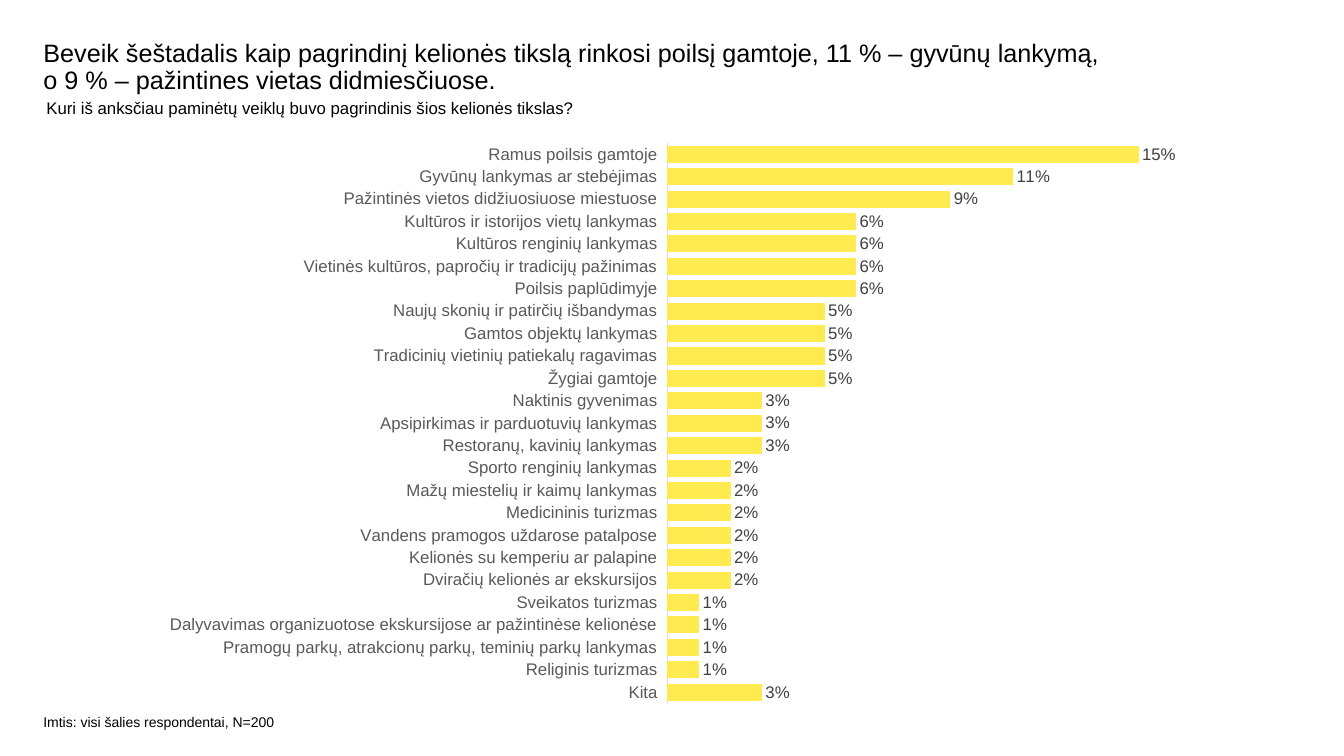
from lxml import etree
from pptx import Presentation
from pptx.chart.data import CategoryChartData
from pptx.dml.color import RGBColor
from pptx.enum.chart import XL_CHART_TYPE, XL_LABEL_POSITION, XL_TICK_LABEL_POSITION, XL_TICK_MARK
from pptx.enum.text import MSO_ANCHOR, MSO_AUTO_SIZE, PP_ALIGN
from pptx.oxml import parse_xml
from pptx.oxml.ns import nsdecls, qn
from pptx.util import Pt

BAR_CLUSTERED = XL_CHART_TYPE.BAR_CLUSTERED
OUTSIDE_END = XL_LABEL_POSITION.OUTSIDE_END
NO_TICK = XL_TICK_MARK.NONE
LABELS_LOW = XL_TICK_LABEL_POSITION.LOW
TOP = MSO_ANCHOR.TOP
NO_AUTOSIZE = MSO_AUTO_SIZE.NONE
LEFT = PP_ALIGN.LEFT

EMU_PER_PX = 9144
FONT = "Arial"
BLACK, YELLOW, LABEL_GREY, AXIS_GREY, LINE_GREY = "000000", "FFEB50", "404040", "595959", "D9D9D9"

ACTIVITIES = [
    ("Ramus poilsis gamtoje", 15),
    ("Gyvūnų lankymas ar stebėjimas", 11),
    ("Pažintinės vietos didžiuosiuose miestuose", 9),
    ("Kultūros ir istorijos vietų lankymas", 6),
    ("Kultūros renginių lankymas", 6),
    ("Vietinės kultūros, papročių ir tradicijų pažinimas", 6),
    ("Poilsis paplūdimyje", 6),
    ("Naujų skonių ir patirčių išbandymas", 5),
    ("Gamtos objektų lankymas", 5),
    ("Tradicinių vietinių patiekalų ragavimas", 5),
    ("Žygiai gamtoje", 5),
    ("Naktinis gyvenimas", 3),
    ("Apsipirkimas ir parduotuvių lankymas", 3),
    ("Restoranų, kavinių lankymas", 3),
    ("Sporto renginių lankymas", 2),
    ("Mažų miestelių ir kaimų lankymas", 2),
    ("Medicininis turizmas", 2),
    ("Vandens pramogos uždarose patalpose", 2),
    ("Kelionės su kemperiu ar palapine", 2),
    ("Dviračių kelionės ar ekskursijos", 2),
    ("Sveikatos turizmas", 1),
    ("Dalyvavimas organizuotose ekskursijose ar pažintinėse kelionėse", 1),
    ("Pramogų parkų, atrakcionų parkų, teminių parkų lankymas", 1),
    ("Religinis turizmas", 1),
    ("Kita", 3),
]


def px(length):
    """Turn whole pixels into EMU."""
    return length * EMU_PER_PX


def color(hex_string):
    """Turn a hex string into a colour."""
    return RGBColor.from_string(hex_string)


def format_font(font, size, hex_string):
    """Set the face, size and colour of a font."""
    font.name = FONT
    font.size = Pt(size)
    font.color.rgb = color(hex_string)


def fill_text(placeholder, box, text, size, margin=0, indent=0):
    """Place a placeholder in its box and write one formatted paragraph."""
    placeholder.left, placeholder.top, placeholder.width, placeholder.height = map(px, box)
    frame = placeholder.text_frame
    frame.margin_left = frame.margin_right = frame.margin_top = frame.margin_bottom = 0
    frame.word_wrap = True
    frame.auto_size = NO_AUTOSIZE
    frame.vertical_anchor = TOP
    paragraph = frame.paragraphs[0]
    paragraph.alignment = LEFT
    paragraph.line_spacing = 0.9
    paragraph.space_before = Pt(0)
    properties = paragraph._p.get_or_add_pPr()
    properties.set("marL", str(px(margin)))
    properties.set("indent", str(px(indent)))
    etree.SubElement(properties, qn("a:buNone"))
    run = paragraph.add_run()
    run.text = text
    format_font(run.font, size, BLACK)


def set_plot_area(chart, box, plot):
    """Fix the inner plot area inside the chart box."""
    left, top, width, height = box
    fractions = {
        "x": (plot[0] - left) / width,
        "y": (plot[1] - top) / height,
        "w": plot[2] / width,
        "h": plot[3] / height,
    }
    modes = '<c:xMode val="edge"/><c:yMode val="edge"/>'
    values = "".join(f'<c:{name} val="{value:.4f}"/>' for name, value in fractions.items())
    layout = parse_xml(
        f'<c:layout {nsdecls("c")}><c:manualLayout><c:layoutTarget val="inner"/>'
        f"{modes}{values}</c:manualLayout></c:layout>"
    )
    plot_area = chart._chartSpace.chart.plotArea
    for old_layout in plot_area.findall(qn("c:layout")):
        plot_area.remove(old_layout)
    plot_area.insert(0, layout)


def add_activity_chart(slide, box, plot):
    """Draw the bar chart of main trip purposes."""
    data = CategoryChartData(number_format="0%")
    rows = ACTIVITIES[::-1]
    data.categories = [name for name, share in rows]
    data.add_series("Series 1", [share / 100 for name, share in rows])
    chart = slide.shapes.add_chart(BAR_CLUSTERED, *map(px, box), data).chart
    chart.has_legend = False
    chart.has_title = False
    format_font(chart.font, 10, BLACK)
    set_plot_area(chart, box, plot)

    category_axis = chart.category_axis
    category_axis.major_tick_mark = category_axis.minor_tick_mark = NO_TICK
    category_axis.tick_label_position = LABELS_LOW
    category_axis.has_major_gridlines = False
    category_axis.format.line.color.rgb = color(LINE_GREY)
    category_axis.format.line.width = Pt(0.75)
    format_font(category_axis.tick_labels.font, 12, AXIS_GREY)

    value_axis = chart.value_axis
    value_axis.minimum_scale = 0
    value_axis.maximum_scale = 0.16
    value_axis.has_major_gridlines = False
    value_axis.visible = False

    bars = chart.plots[0]
    bars.gap_width = 40
    bars.vary_by_categories = False
    series = bars.series[0]
    series.format.fill.solid()
    series.format.fill.fore_color.rgb = color(YELLOW)
    series.format.line.color.rgb = color(YELLOW)
    series.format.line.width = Pt(0.75)
    labels = series.data_labels
    labels.show_value = True
    labels.position = OUTSIDE_END
    labels.number_format = "0%"
    labels.number_format_is_linked = False
    format_font(labels.font, 12, LABEL_GREY)


def add_texts(slide):
    """Write the title, the survey question and the sample note."""
    title, question, sample = slide.placeholders
    fill_text(
        title, (43, 40, 1053, 40),
        "Beveik šeštadalis kaip pagrindinį kelionės tikslą rinkosi poilsį gamtoje, "
        "11 % – gyvūnų lankymą, o 9 % – pažintines vietas didmiesčiuose.", 18,
    )
    fill_text(
        question, (21, 99, 1248, 552),
        "Kuri iš anksčiau paminėtų veiklų buvo pagrindinis šios kelionės tikslas?",
        12, margin=50, indent=-25,
    )
    fill_text(sample, (43, 710, 408, 16), "Imtis: visi šalies respondentai, N=200", 10)


def main():
    """Build the slide and save it."""
    presentation = Presentation()
    presentation.slide_width, presentation.slide_height = px(1333), px(750)
    slide = presentation.slides.add_slide(presentation.slide_layouts[3])
    add_texts(slide)
    add_activity_chart(slide, (154, 131, 1026, 579), (662, 142, 498, 556))
    presentation.save("out.pptx")


if __name__ == "__main__":
    main()
